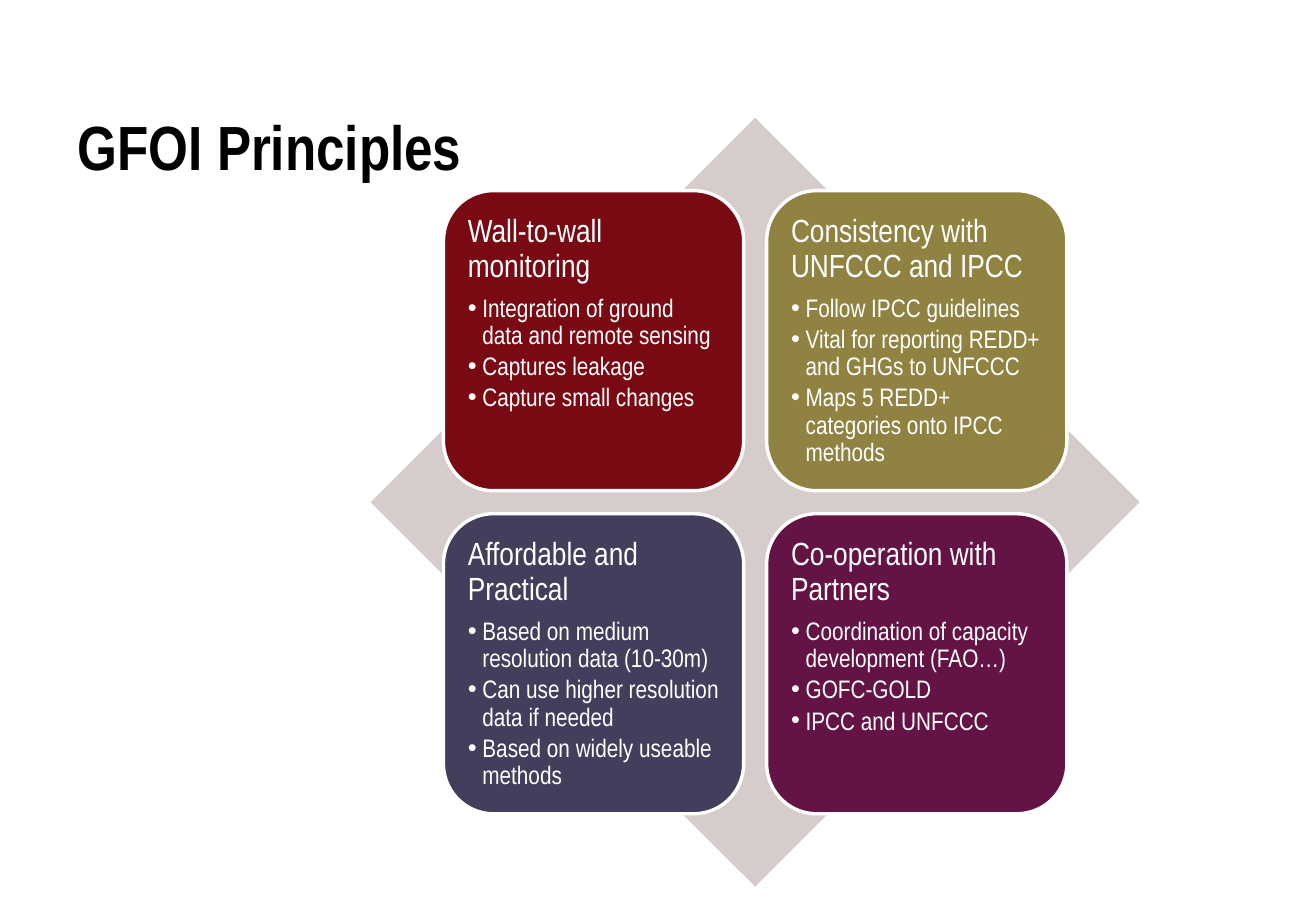
from lxml.etree import SubElement
from pptx import Presentation
from pptx.dml.color import RGBColor
from pptx.enum.shapes import MSO_SHAPE
from pptx.enum.text import MSO_ANCHOR, PP_ALIGN
from pptx.oxml.ns import qn
from pptx.util import Inches, Pt

FONT_NAME = "Arial Narrow"
BLACK = RGBColor(0x00, 0x00, 0x00)
WHITE = RGBColor(0xFF, 0xFF, 0xFF)
PALE_GREY = RGBColor(0xD7, 0xCC, 0xCC)
RED = RGBColor(0x79, 0x0A, 0x14)
OLIVE = RGBColor(0x90, 0x83, 0x42)
SLATE = RGBColor(0x42, 0x3E, 0x5C)
PLUM = RGBColor(0x64, 0x13, 0x45)

CARD_LEFT, CARD_TOP = 3.65, 1.57
CARD_SIZE, CARD_PITCH = 2.47, 2.66
HEADING_SIZE, BULLET_SIZE = 19, 15

PRINCIPLES = [
    ("Wall-to-wall monitoring", RED, [
        "Integration of ground data and remote sensing",
        "Captures leakage",
        "Capture small changes",
    ]),
    ("Consistency with UNFCCC and IPCC", OLIVE, [
        "Follow IPCC guidelines",
        "Vital for reporting REDD+ and GHGs to UNFCCC",
        "Maps 5 REDD+ categories onto IPCC methods",
    ]),
    ("Affordable and Practical", SLATE, [
        "Based on medium resolution data (10-30m)",
        "Can use higher resolution data if needed",
        "Based on widely useable methods",
    ]),
    ("Co-operation with Partners", PLUM, [
        "Coordination of capacity development (FAO…)",
        "GOFC-GOLD",
        "IPCC and UNFCCC",
    ]),
]


def set_attributes(target, values):
    for name, value in values.items():
        setattr(target, name, value)


def write_run(paragraph, text, size, color, bold=False):
    run = paragraph.add_run()
    run.text = text
    set_attributes(run.font, {"name": FONT_NAME, "size": Pt(size), "bold": bold})
    run.font.color.rgb = color


def write_card_paragraph(paragraph, text, size, space_share):
    """Write one left-aligned line whose space after is a share of its size."""
    set_attributes(paragraph, {
        "alignment": PP_ALIGN.LEFT,
        "line_spacing": 0.9,
        "space_before": Pt(0),
        "space_after": Pt(size * space_share),
    })
    write_run(paragraph, text, size, WHITE)


def add_bullet(text_frame, text):
    paragraph = text_frame.add_paragraph()
    paragraph.level = 1
    write_card_paragraph(paragraph, text, BULLET_SIZE, 0.15)
    properties = paragraph._p.get_or_add_pPr()
    properties.set("marL", str(Inches(0.12)))
    properties.set("indent", str(-Inches(0.12)))
    SubElement(properties, qn("a:buFont"), typeface="Arial")
    SubElement(properties, qn("a:buChar"), char="•")


def add_filled_shape(slide, kind, left, top, size, color):
    shape = slide.shapes.add_shape(
        kind, Inches(left), Inches(top), Inches(size), Inches(size))
    shape.shadow.inherit = False
    shape.fill.solid()
    shape.fill.fore_color.rgb = color
    return shape


def add_diamond(slide):
    diamond = add_filled_shape(slide, MSO_SHAPE.DIAMOND, 3.05, 0.97, 6.33, PALE_GREY)
    diamond.line.fill.background()


def add_card(slide, left, top, heading, color, bullets):
    card = add_filled_shape(
        slide, MSO_SHAPE.ROUNDED_RECTANGLE, left, top, CARD_SIZE, color)
    card.line.color.rgb = WHITE
    card.line.width = Pt(2)
    text_frame = card.text_frame
    margins = ("margin_left", "margin_top", "margin_right", "margin_bottom")
    set_attributes(text_frame, dict.fromkeys(margins, Inches(0.08)))
    set_attributes(text_frame, {
        "word_wrap": True, "vertical_anchor": MSO_ANCHOR.TOP})
    write_card_paragraph(text_frame.paragraphs[0], heading, HEADING_SIZE, 0.35)
    for bullet in bullets:
        add_bullet(text_frame, bullet)


def set_title(slide, text):
    title = slide.shapes.title
    set_attributes(title, {
        "left": Inches(0.54), "top": Inches(0.84),
        "width": Inches(9.75), "height": Inches(0.71)})
    title.text_frame.vertical_anchor = MSO_ANCHOR.MIDDLE
    paragraph = title.text_frame.paragraphs[0]
    paragraph.alignment = PP_ALIGN.LEFT
    write_run(paragraph, text, 37, BLACK, bold=True)


def main():
    presentation = Presentation()
    presentation.slide_width = Inches(10.83)
    presentation.slide_height = Inches(7.5)
    title_only = presentation.slide_layouts[5]
    slide = presentation.slides.add_slide(title_only)
    set_title(slide, "GFOI Principles")
    add_diamond(slide)
    for index, (heading, color, bullets) in enumerate(PRINCIPLES):
        row, column = divmod(index, 2)
        add_card(slide, CARD_LEFT + column * CARD_PITCH,
                 CARD_TOP + row * CARD_PITCH, heading, color, bullets)
    presentation.save("out.pptx")


if __name__ == "__main__":
    main()
